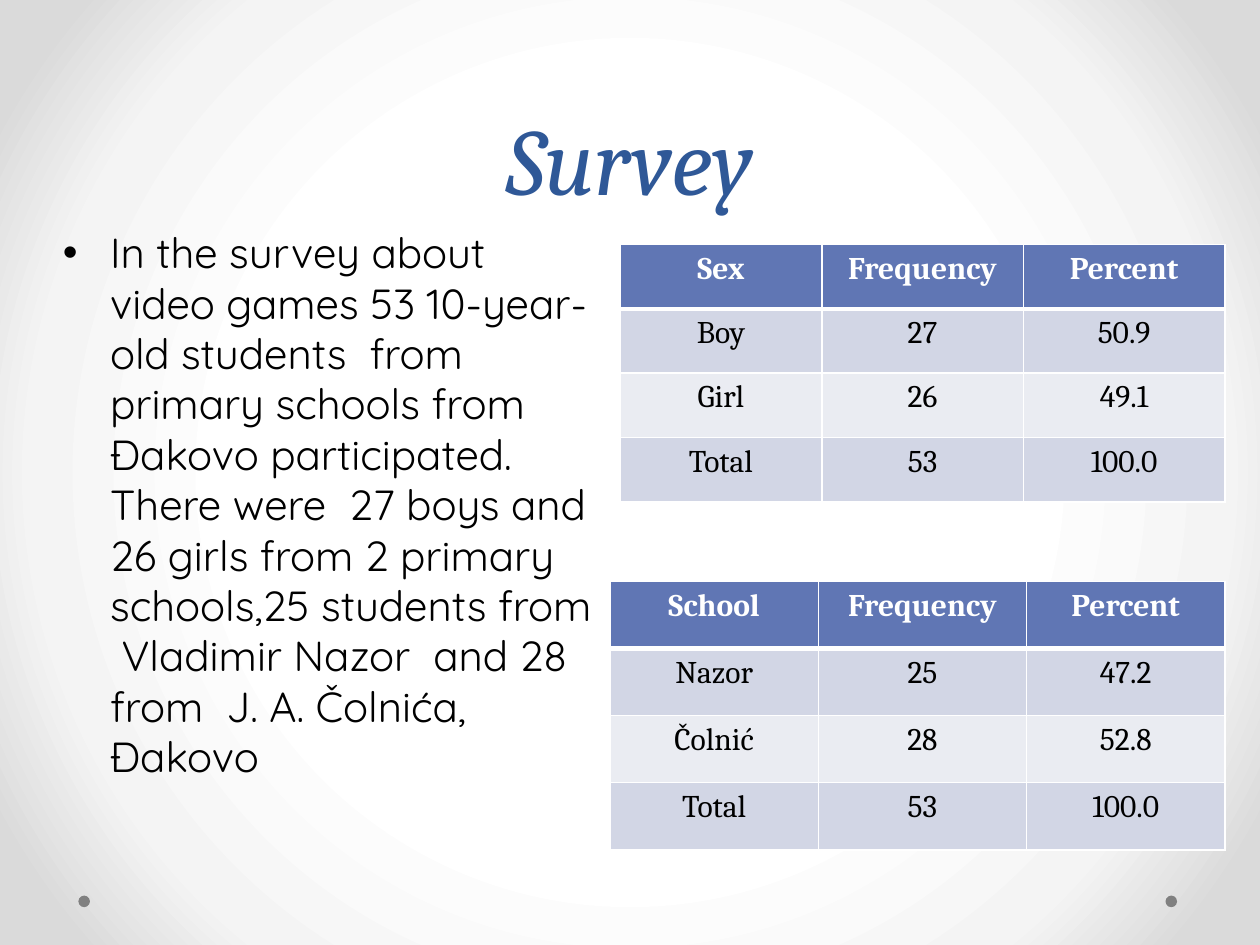
from lxml import etree
from pptx import Presentation
from pptx.dml.color import RGBColor
from pptx.enum.shapes import MSO_SHAPE
from pptx.enum.text import MSO_ANCHOR, PP_ALIGN
from pptx.oxml import parse_xml
from pptx.oxml.ns import qn
from pptx.util import Pt

OVAL = MSO_SHAPE.OVAL
TOP, BOTTOM = MSO_ANCHOR.TOP, MSO_ANCHOR.BOTTOM
LEFT, CENTER = PP_ALIGN.LEFT, PP_ALIGN.CENTER
NS = ('xmlns:a="http://schemas.openxmlformats.org/drawingml/2006/main" '
      'xmlns:p="http://schemas.openxmlformats.org/presentationml/2006/main"')
SERIF, SANS = "Cambria", "Quicksand"
WHITE, BLACK, BLUE, NAVY, GRAY = "FFFFFF", "000000", "6076B4", "2F5897", "808080"
BANDS = ["D2D6E5", "EAECF2"]
STOPS = [(50, "FFFFFF"), (76, "F4F4F4"), (92, "DADADA")]
STORY = ("In the survey about video games 53 10-year-old students  from primary "
         "schools from Đakovo participated. There were  27 boys and 26 girls from "
         "2 primary schools,25 students from  Vladimir Nazor  and 28 from  "
         "J. A. Čolnića, Đakovo")
SEX = [["Sex", "Frequency", "Percent"], ["Boy", "27", "50.9"],
       ["Girl", "26", "49.1"], ["Total", "53", "100.0"]]
SCHOOL = [["School", "Frequency", "Percent"], ["Nazor", "25", "47.2"],
          ["Čolnić", "28", "52.8"], ["Total", "53", "100.0"]]


def color(code):
    return RGBColor.from_string(code)


def write(frame, text, size=18, face=SERIF, ink=BLACK, bold=False, slant=False,
          align=CENTER, lead=None, mark=None, dent=0):
    para = frame.paragraphs[0]
    if mark:
        props = para._p.get_or_add_pPr()
        props.set("marL", str(Pt(dent)))
        props.set("indent", str(-Pt(dent)))
        etree.SubElement(props, qn("a:buFont")).set("typeface", "Arial")
        etree.SubElement(props, qn("a:buChar")).set("char", mark)
    para.alignment = align
    if lead:
        para.line_spacing = Pt(lead)
    run = para.add_run()
    run.text = text
    font = run.font
    font.name, font.size, font.bold, font.italic = face, Pt(size), bold, slant
    font.color.rgb = color(ink)


def paint(slide):
    stops = "".join(f'<a:gs pos="{pos * 1000}"><a:srgbClr val="{code}"/></a:gs>'
                    for pos, code in STOPS)
    back = parse_xml(
        f'<p:bg {NS}><p:bgPr><a:gradFill rotWithShape="1"><a:gsLst>{stops}</a:gsLst>'
        '<a:path path="circle"><a:fillToRect l="50000" t="50000" r="50000" b="50000"/>'
        '</a:path></a:gradFill><a:effectLst/></p:bgPr></p:bg>')
    slide.element.cSld.insert(0, back)


def dot(slide, box):
    shape = slide.shapes.add_shape(OVAL, *map(Pt, box))
    shape.shadow.inherit = False
    shape.fill.solid()
    shape.fill.fore_color.rgb = color(GRAY)
    shape.line.fill.background()


def label(slide, box, text, anchor=TOP, **style):
    frame = slide.shapes.add_textbox(*map(Pt, box)).text_frame
    frame.word_wrap = True
    frame.vertical_anchor = anchor
    write(frame, text, **style)


def edge(cell, base):
    props = cell._tc.get_or_add_tcPr()
    for side, width in zip("LRTB", (1, 1, 1, base)):
        line = etree.SubElement(props, qn(f"a:ln{side}"), w=str(Pt(width)))
        fill = etree.SubElement(line, qn("a:solidFill"))
        etree.SubElement(fill, qn("a:srgbClr"), val=WHITE)


def grid(slide, box, rows, widths):
    table = slide.shapes.add_table(len(rows), len(widths), *map(Pt, box)).table
    for col, width in zip(table.columns, widths):
        col.width = Pt(width)
    for r, row in enumerate(rows):
        table.rows[r].height = Pt(box[3] / len(rows))
        head = r == 0
        for c, text in enumerate(row):
            cell = table.cell(r, c)
            edge(cell, 3 if head else 1)
            cell.fill.solid()
            cell.fill.fore_color.rgb = color(BLUE if head else BANDS[(r - 1) % 2])
            write(cell.text_frame, text, ink=WHITE if head else BLACK, bold=head)


def main():
    deck = Presentation()
    deck.slide_width, deck.slide_height = Pt(720), Pt(540)
    slide = deck.slides.add_slide(deck.slide_layouts[6])
    paint(slide)
    for left in (666, 44.8):
        dot(slide, (left, 511.8, 6.6, 6.6))
    label(slide, (36, 0, 648, 126), "Survey", anchor=BOTTOM, size=54, ink=NAVY,
          slant=True, lead=58)
    grid(slide, (354.4, 139.8, 345.6, 147), SEX, [115.2] * 3)
    label(slide, (28.8, 126, 318.2, 356.4), STORY, size=24, face=SANS,
          align=LEFT, mark="•", dent=27)
    grid(slide, (348.6, 332.4, 351.4, 153.2), SCHOOL, [119, 119, 113.4])
    deck.save("out.pptx")


if __name__ == "__main__":
    main()
